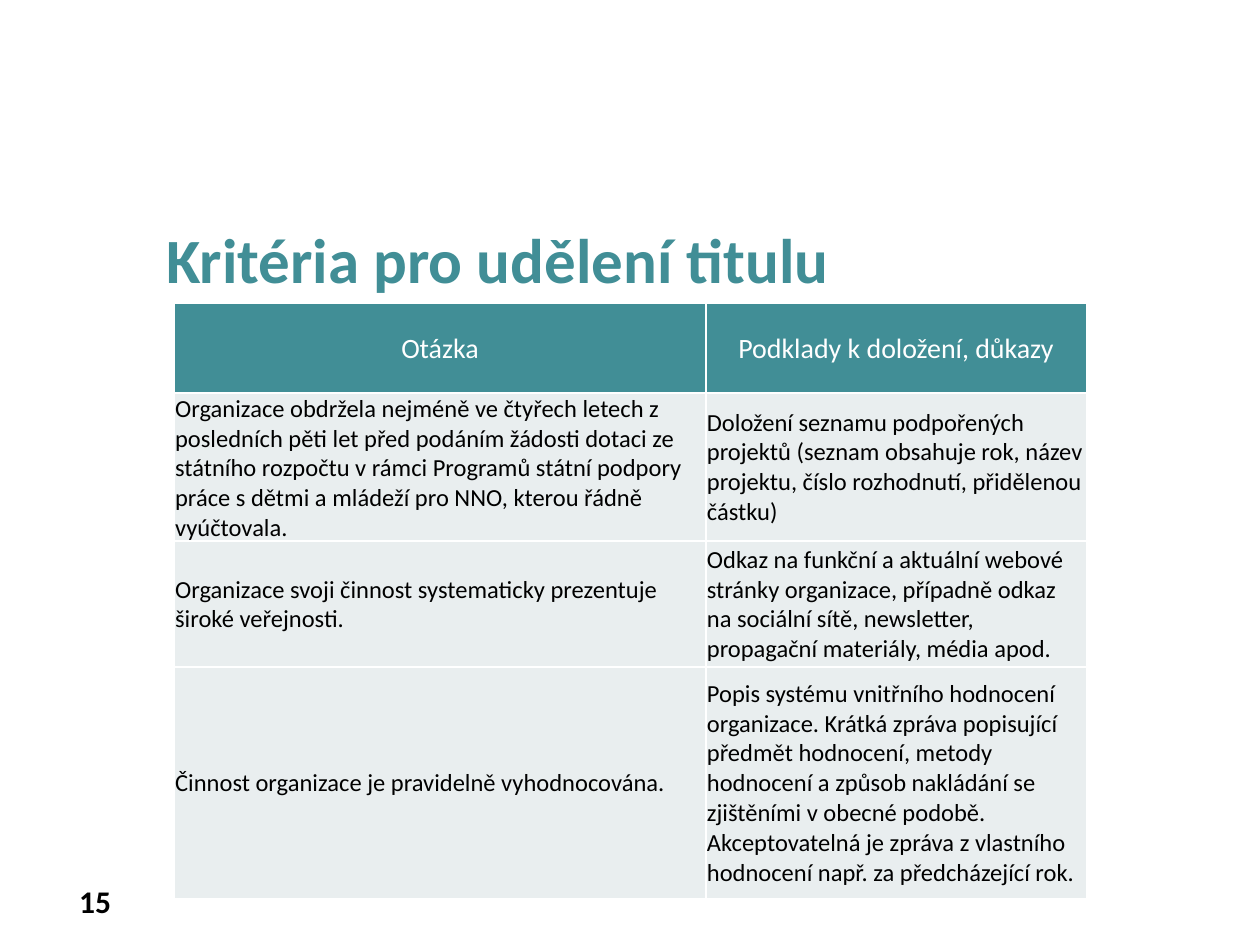
from lxml import etree
from pptx import Presentation
from pptx import util as u
from pptx.dml.color import RGBColor
from pptx.enum import text
from pptx.oxml.ns import qn

TEAL = RGBColor(0x41, 0x8E, 0x96)
PALE = RGBColor(0xE9, 0xEE, 0xEF)
WHITE = RGBColor(0xFF, 0xFF, 0xFF)
BLACK = RGBColor(0, 0, 0)
FONT = "Calibri"

COLUMN_WIDTHS = (10.72, 7.67)
ROW_HEIGHTS = (1.8, 2.97, 2.54, 4.67)
CRITERIA = (
    ("Otázka", "Podklady k doložení, důkazy"),
    ("Organizace obdržela nejméně ve čtyřech letech z posledních pěti let "
     "před podáním žádosti dotaci ze státního rozpočtu v rámci Programů "
     "státní podpory práce s dětmi a mládeží pro NNO, kterou řádně vyúčtovala.",
     "Doložení seznamu podpořených projektů (seznam obsahuje rok, název "
     "projektu, číslo rozhodnutí, přidělenou částku)"),
    ("Organizace svoji činnost systematicky prezentuje široké veřejnosti.",
     "Odkaz na funkční a aktuální webové stránky organizace, případně odkaz "
     "na sociální sítě, newsletter, propagační materiály, média apod."),
    ("Činnost organizace je pravidelně vyhodnocována.",
     "Popis systému vnitřního hodnocení organizace. Krátká zpráva popisující "
     "předmět hodnocení, metody hodnocení a způsob nakládání se zjištěními "
     "v obecné podobě. Akceptovatelná je zpráva z vlastního hodnocení např. "
     "za předcházející rok."),
)


def style(paragraph, size, color, align, bold=False):
    paragraph.alignment = align
    font = paragraph.font
    font.name, font.size, font.bold = FONT, u.Pt(size), bold
    font.color.rgb = color


def add_label(slide, wording, left, top, width, height, size, color, align):
    frame = slide.shapes.add_textbox(
        u.Cm(left), u.Cm(top), u.Cm(width), u.Cm(height)).text_frame
    frame.word_wrap = True
    frame.text = wording
    style(frame.paragraphs[0], size, color, align, bold=True)


def add_borders(cell):
    properties = cell._tc.get_or_add_tcPr()
    for side in ("a:lnL", "a:lnR", "a:lnT", "a:lnB"):
        line = etree.SubElement(properties, qn(side), w=str(u.Pt(1)))
        fill = etree.SubElement(line, qn("a:solidFill"))
        etree.SubElement(fill, qn("a:srgbClr"), val=str(WHITE))


def fill_cell(cell, wording, is_header):
    cell.text = wording
    cell.vertical_anchor = text.MSO_ANCHOR.MIDDLE
    cell.margin_left = cell.margin_right = cell.margin_top = u.Cm(0.02)
    cell.margin_bottom = 0
    # Borders come before the fill in the cell properties
    add_borders(cell)
    cell.fill.solid()
    cell.fill.fore_color.rgb = TEAL if is_header else PALE
    if is_header:
        style(cell.text_frame.paragraphs[0], 16, WHITE, text.PP_ALIGN.CENTER)
    else:
        style(cell.text_frame.paragraphs[0], 14, BLACK, text.PP_ALIGN.LEFT)


def add_criteria_table(slide, left, top):
    table = slide.shapes.add_table(
        len(ROW_HEIGHTS), len(COLUMN_WIDTHS), u.Cm(left), u.Cm(top),
        u.Cm(sum(COLUMN_WIDTHS)), u.Cm(sum(ROW_HEIGHTS))).table
    for column, width in zip(table.columns, COLUMN_WIDTHS):
        column.width = u.Cm(width)
    for index, (row, height) in enumerate(zip(table.rows, ROW_HEIGHTS)):
        row.height = u.Cm(height)
        for cell, wording in zip(row.cells, CRITERIA[index]):
            fill_cell(cell, wording, is_header=index == 0)


def main():
    deck = Presentation()
    deck.slide_width, deck.slide_height = u.Cm(25.4), u.Cm(19.05)
    slide = deck.slides.add_slide(deck.slide_layouts[6])

    # Page number
    add_label(slide, "15", 0.69, 17.65, 1.8, 1.02, 18, BLACK,
              text.PP_ALIGN.RIGHT)
    # Heading
    add_label(slide, "Kritéria pro udělení titulu", 3.1, 4.32, 21.03, 14,
              36, TEAL, text.PP_ALIGN.LEFT)
    # Criteria and evidence
    add_criteria_table(slide, 3.51, 6.12)

    deck.save("out.pptx")


if __name__ == "__main__":
    main()
